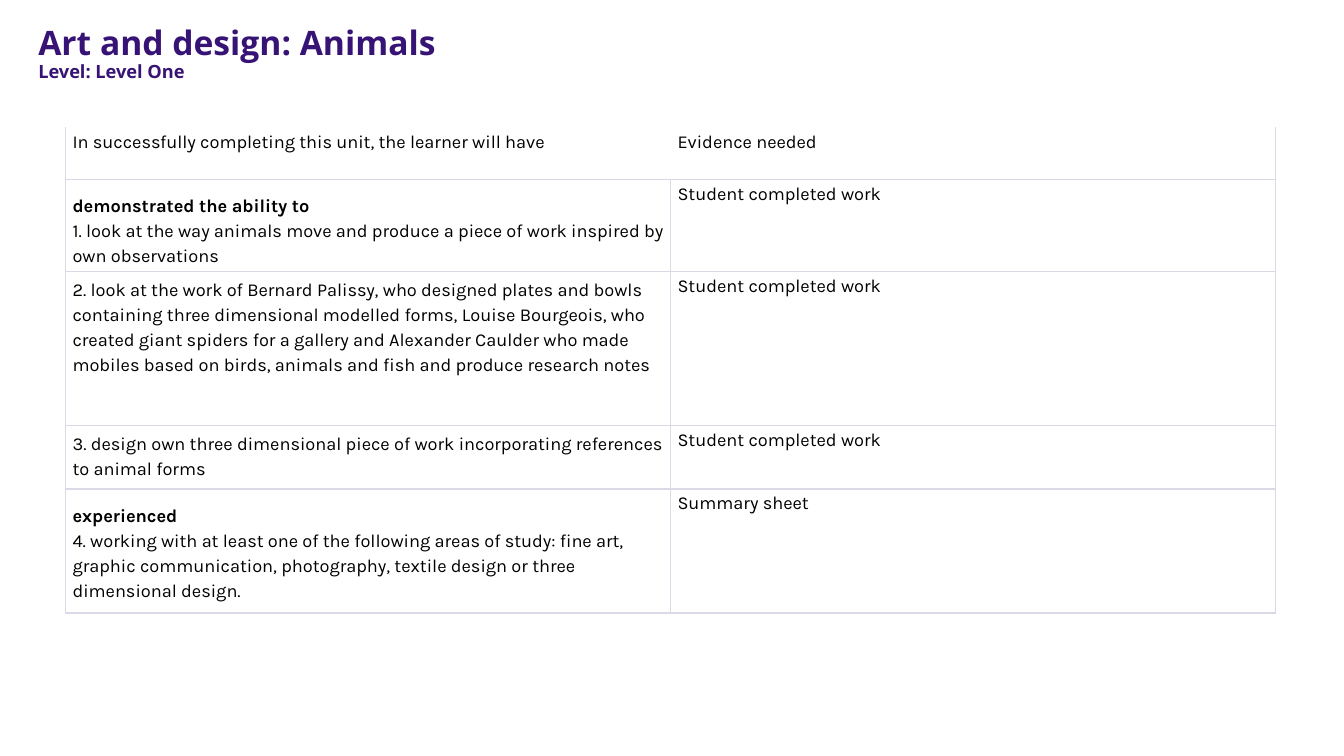
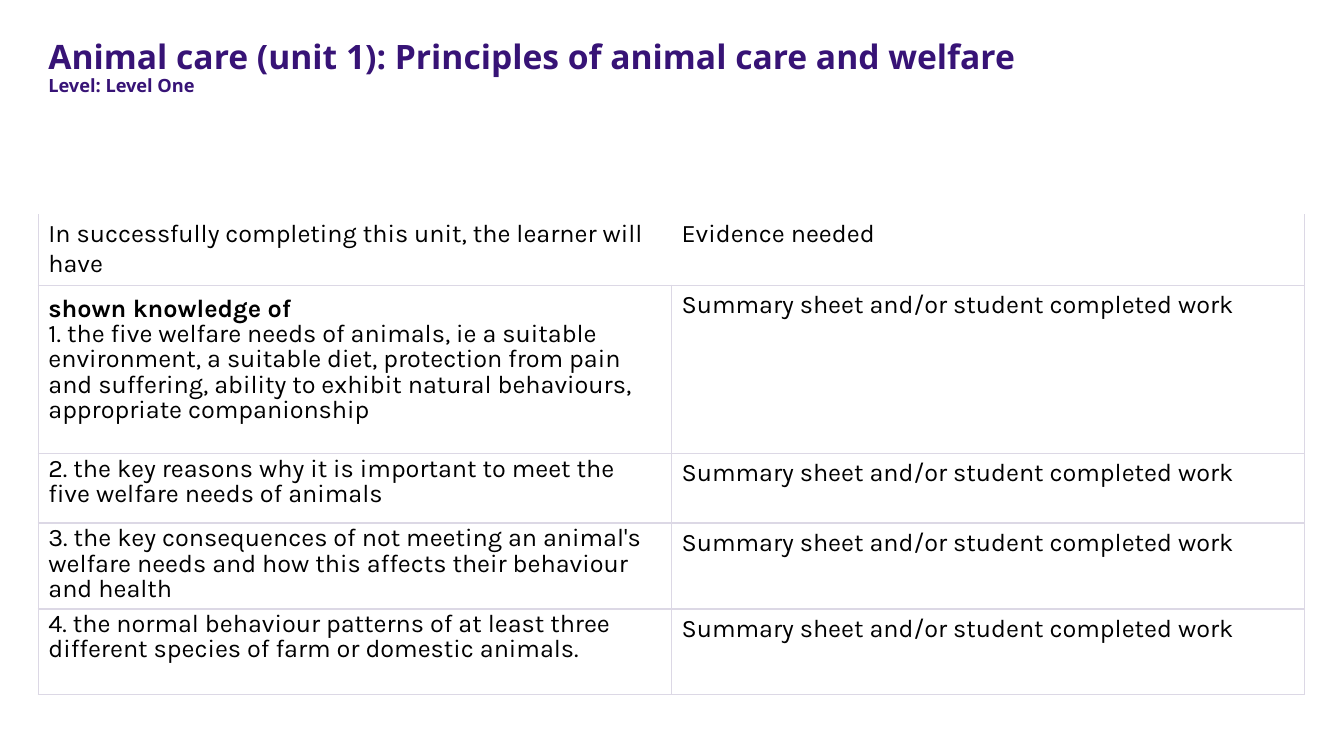
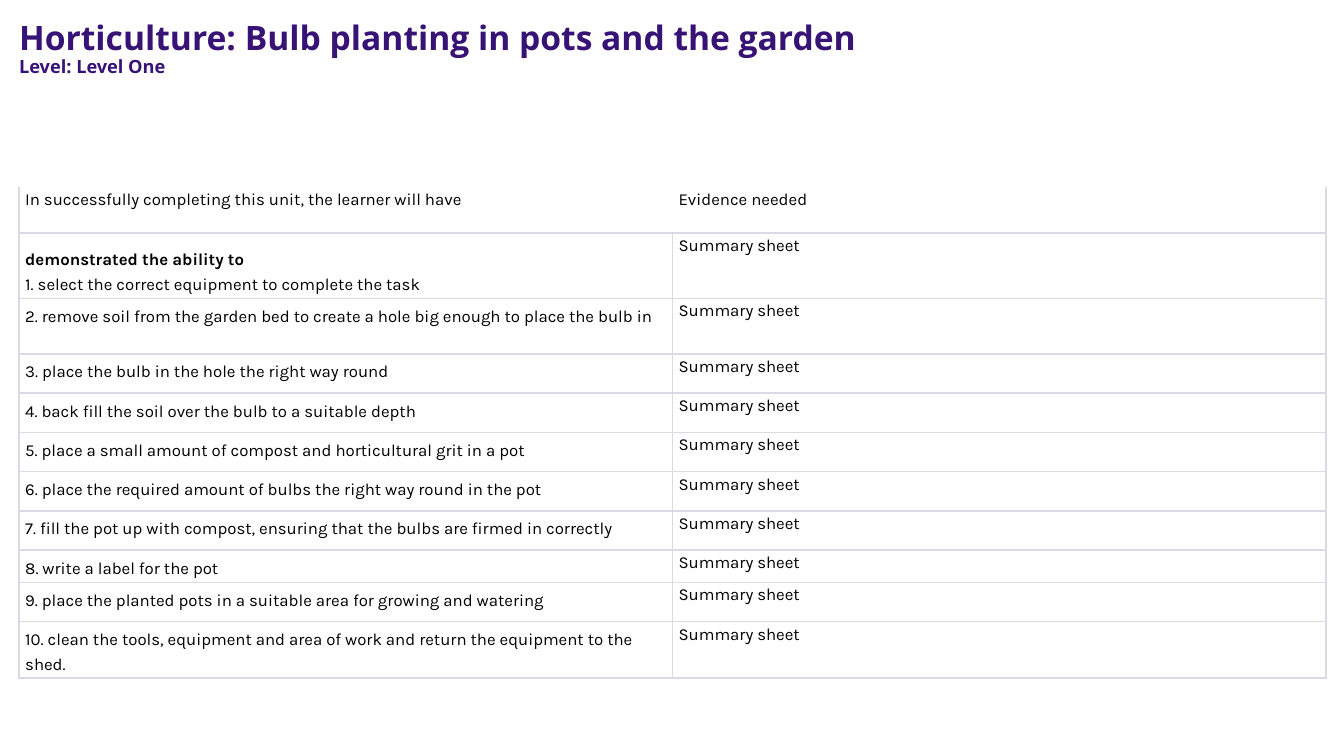
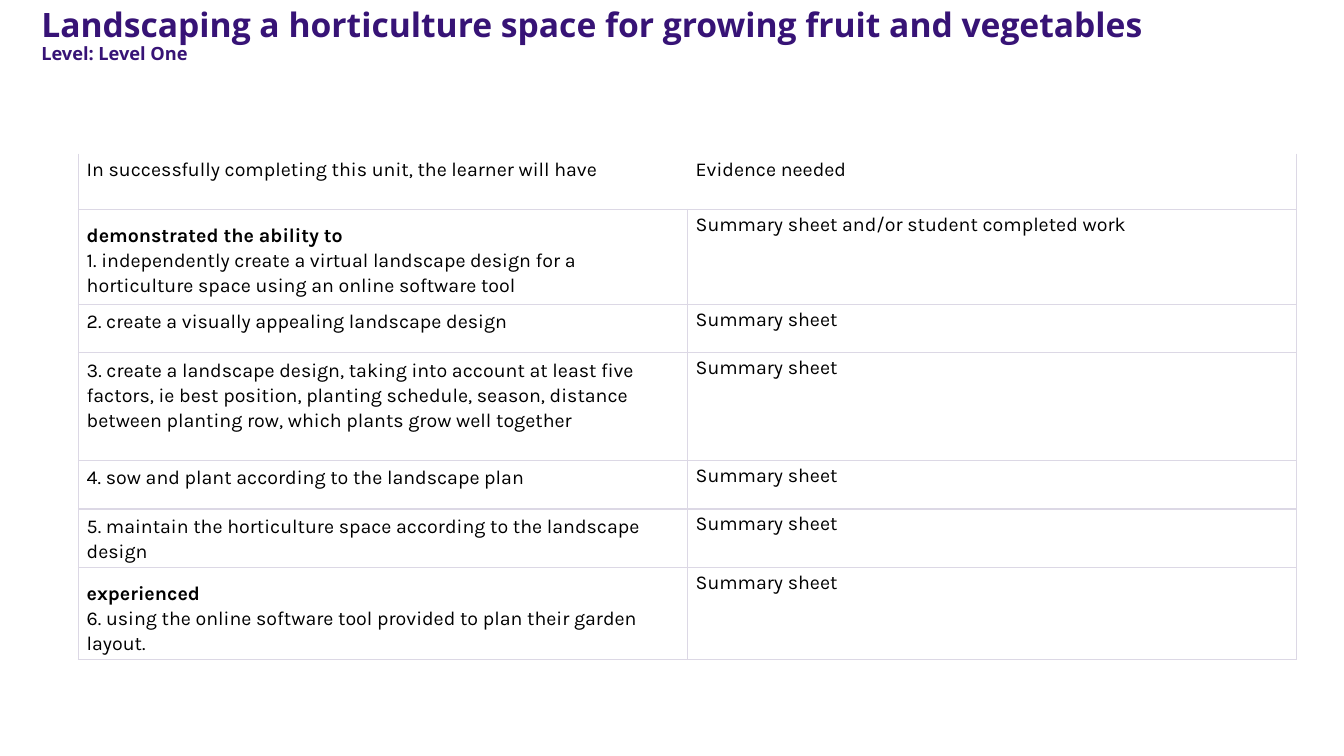
from dataclasses import dataclass

from lxml.etree import SubElement
from pptx import Presentation
from pptx.dml.color import RGBColor
from pptx.oxml.ns import qn
from pptx.util import Inches, Pt


@dataclass(frozen=True)
class Theme:
    title_font: str = "Open Sans"
    body_font: str = "Karla"
    purple: str = "371376"
    black: str = "000000"
    white: str = "FFFFFF"
    rule: str = "DCD8E5"
    title_size: float = 24
    level_size: float = 13
    title_spacing: float = 0.9
    heading_leading: float = 24
    criterion_leading: float = 18
    rule_width: float = 1.2
    edge_width: float = 1


THEME = Theme()
SLIDE_WIDTH, SLIDE_HEIGHT = 13.33, 7.5
TITLE_HEIGHT = 0.63
LEVEL = "Level: Level One"
COLUMN_HEADS = ("In successfully completing this unit, the learner will have", "Evidence needed")
ABILITY = "demonstrated the ability to"
KNOWLEDGE = "shown knowledge of"
EXPERIENCE = "experienced"
WORK = "Student completed work"
SUMMARY = "Summary sheet"
EITHER = "Summary sheet and/or student completed work"

UNITS = [
    {
        "title": "Art and design: Animals",
        "title_at": (0.38, 0.26),
        "table_at": (0.65, 1.27),
        "column": 6,
        "size": 13,
        "margins": (0.07, 0.04),
        "head_height": 0.51,
        "outcomes": [
            (0.87, ABILITY, "look at the way animals move and produce a piece of work inspired by own observations", WORK),
            (1.53, None, "look at the work of Bernard Palissy, who designed plates and bowls containing three "
             "dimensional modelled forms, Louise Bourgeois, who created giant spiders for a gallery and "
             "Alexander Caulder who made mobiles based on birds, animals and fish and produce research notes", WORK),
            (0.63, None, "design own three dimensional piece of work incorporating references to animal forms", WORK),
            (1.23, EXPERIENCE, "working with at least one of the following areas of study: fine art, graphic "
             "communication, photography, textile design or three dimensional design.", SUMMARY),
        ],
    },
    {
        "title": "Animal care (unit 1): Principles of animal care and welfare",
        "title_at": (0.48, 0.4),
        "table_at": (0.38, 2.13),
        "column": 6.28,
        "size": 18,
        "margins": (0.1, 0.05),
        "head_height": 0.69,
        "outcomes": [
            (1.67, KNOWLEDGE, "the five welfare needs of animals, ie a suitable environment, a suitable diet, "
             "protection from pain and suffering, ability to exhibit natural behaviours, appropriate companionship", EITHER),
            (0.69, None, "the key reasons why it is important to meet the five welfare needs of animals", EITHER),
            (0.85, None, "the key consequences of not meeting an animal's welfare needs and how this affects "
             "their behaviour and health", EITHER),
            (0.85, None, "the normal behaviour patterns of at least three different species of farm or domestic animals.", EITHER),
        ],
    },
    {
        "title": "Horticulture: Bulb planting in pots and the garden",
        "title_at": (0.19, 0.21),
        "table_at": (0.19, 1.86),
        "column": 6.48,
        "size": 12,
        "margins": (0.06, 0.03),
        "head_height": 0.45,
        "outcomes": [
            (0.65, ABILITY, "select the correct equipment to complete the task", SUMMARY),
            (0.55, None, "remove soil from the garden bed to create a hole big enough to place the bulb in", SUMMARY),
            (0.39, None, "place the bulb in the hole the right way round", SUMMARY),
            (0.39, None, "back fill the soil over the bulb to a suitable depth", SUMMARY),
            (0.39, None, "place a small amount of compost and horticultural grit in a pot", SUMMARY),
            (0.39, None, "place the required amount of bulbs the right way round in the pot", SUMMARY),
            (0.39, None, "fill the pot up with compost, ensuring that the bulbs are firmed in correctly", SUMMARY),
            (0.32, None, "write a label for the pot", SUMMARY),
            (0.39, None, "place the planted pots in a suitable area for growing and watering", SUMMARY),
            (0.55, None, "clean the tools, equipment and area of work and return the equipment to the shed.", SUMMARY),
        ],
    },
    {
        "title": "Landscaping a horticulture space for growing fruit and vegetables",
        "title_at": (0.41, 0.08),
        "table_at": (0.78, 1.53),
        "column": 6.04,
        "size": 14,
        "margins": (0.08, 0.04),
        "head_height": 0.55,
        "outcomes": [
            (0.94, ABILITY, "independently create a virtual landscape design for a horticulture space using an "
             "online software tool", EITHER),
            (0.48, None, "create a visually appealing landscape design", SUMMARY),
            (1.07, None, "create a landscape design, taking into account at least five factors, ie best position, "
             "planting schedule, season, distance between planting row, which plants grow well together", SUMMARY),
            (0.48, None, "sow and plant according to the landscape plan", SUMMARY),
            (0.58, None, "maintain the horticulture space according to the landscape design", SUMMARY),
            (0.91, EXPERIENCE, "using the online software tool provided to plan their garden layout.", SUMMARY),
        ],
    },
]


def write_lines(frame, lines, font_name, color):
    for index, (text, size, bold, spacing) in enumerate(lines):
        paragraph = frame.add_paragraph() if index else frame.paragraphs[0]
        paragraph.text = text
        if spacing:
            paragraph.line_spacing = spacing
        font = paragraph.font
        font.name, font.size, font.bold = font_name, Pt(size), bold
        font.color.rgb = RGBColor.from_string(color)


def add_title(slide, unit):
    left, top = unit["title_at"]
    heading = slide.shapes.add_textbox(
        Inches(left), Inches(top), Inches(SLIDE_WIDTH - left), Inches(TITLE_HEIGHT))
    frame = heading.text_frame
    frame.word_wrap = True
    frame.margin_left = frame.margin_right = frame.margin_top = frame.margin_bottom = 0
    write_lines(frame, [
        (unit["title"], THEME.title_size, True, THEME.title_spacing),
        (LEVEL, THEME.level_size, True, THEME.title_spacing),
    ], THEME.title_font, THEME.purple)


def set_borders(cell, hidden):
    properties = cell._tc.get_or_add_tcPr()
    for side in "LRTB":
        color, width = (THEME.white, THEME.edge_width) if side in hidden else (THEME.rule, THEME.rule_width)
        line = SubElement(properties, qn(f"a:ln{side}"), w=str(Pt(width)))
        SubElement(SubElement(line, qn("a:solidFill")), qn("a:srgbClr"), val=color)


def fill_cell(cell, lines, unit, hidden=""):
    across, down = unit["margins"]
    cell.margin_left = cell.margin_right = Inches(across)
    cell.margin_top = cell.margin_bottom = Inches(down)
    set_borders(cell, hidden)
    cell.fill.background()
    write_lines(cell.text_frame, lines, THEME.body_font, THEME.black)


def add_outcomes(slide, unit):
    left, top = unit["table_at"]
    size = unit["size"]
    outcomes = unit["outcomes"]
    heights = [unit["head_height"]] + [outcome[0] for outcome in outcomes]
    grid = slide.shapes.add_table(
        len(heights), 2, Inches(left), Inches(top),
        Inches(2 * unit["column"]), Inches(sum(heights))).table
    grid.first_row = grid.horz_banding = False
    for column in grid.columns:
        column.width = Inches(unit["column"])
    for row, height in zip(grid.rows, heights):
        row.height = Inches(height)
    for column, (head, hidden) in enumerate(zip(COLUMN_HEADS, ("TR", "TL"))):
        fill_cell(grid.cell(0, column), [(head, size, False, None)], unit, hidden)
    for number, (_, heading, criterion, evidence) in enumerate(outcomes, 1):
        lines = [(heading, size, True, Pt(THEME.heading_leading))] if heading else []
        lines.append((f"{number}. {criterion}", size, False, Pt(THEME.criterion_leading)))
        fill_cell(grid.cell(number, 0), lines, unit)
        fill_cell(grid.cell(number, 1), [(evidence, size, False, None)], unit)


def main():
    deck = Presentation()
    deck.slide_width, deck.slide_height = Inches(SLIDE_WIDTH), Inches(SLIDE_HEIGHT)
    for unit in UNITS:
        slide = deck.slides.add_slide(deck.slide_layouts[6])
        add_outcomes(slide, unit)
        add_title(slide, unit)
    deck.save("out.pptx")


if __name__ == "__main__":
    main()
